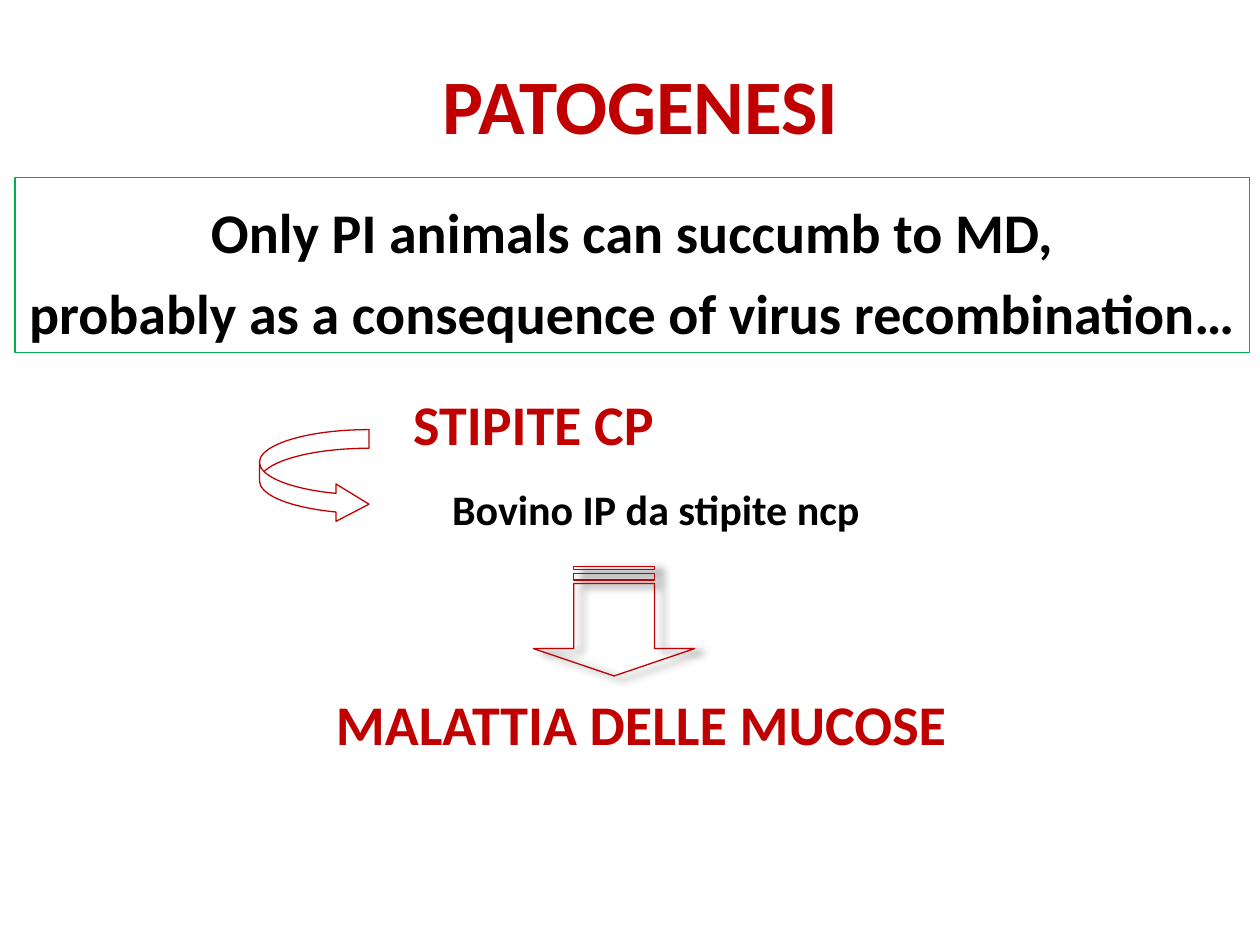
from lxml import etree
from pptx import Presentation
from pptx.dml.color import RGBColor
from pptx.enum import shapes, text
from pptx.oxml.ns import qn
from pptx.util import Pt

RED = RGBColor(0xC0, 0x00, 0x00)
GREEN = RGBColor(0x00, 0xB0, 0x50)
BLACK = RGBColor(0x00, 0x00, 0x00)
FONT = "Calibri"


def write_lines(shape, lines, size, color, wrap=True, spacing=None):
    frame = shape.text_frame
    frame.text = "\n".join(lines)
    frame.word_wrap = wrap
    frame.auto_size = text.MSO_AUTO_SIZE.SHAPE_TO_FIT_TEXT
    for paragraph in frame.paragraphs:
        paragraph.alignment = text.PP_ALIGN.CENTER
        paragraph.line_spacing = spacing
        font = paragraph.runs[0].font
        font.name, font.size, font.bold = FONT, Pt(size), True
        font.color.rgb = color


def add_label(slide, box, label, size, color, wrap=True):
    shape = slide.shapes.add_textbox(*map(Pt, box))
    write_lines(shape, [label], size, color, wrap)


def add_outline(slide, kind, box, color, adjustments=()):
    """Add an unfilled preset shape with a thin line."""
    shape = slide.shapes.add_shape(kind, *map(Pt, box))
    shape.shadow.inherit = False
    shape.fill.background()
    shape.line.color.rgb = color
    shape.line.width = Pt(0.75)
    for index, value in enumerate(adjustments):
        shape.adjustments[index] = value
    return shape


def add_shadow(shape, blur, distance, angle, opacity):
    effects = shape._element.spPr.find(qn("a:effectLst"))
    shadow = etree.SubElement(
        effects, qn("a:outerShdw"), blurRad=str(Pt(blur)), dist=str(Pt(distance)),
        dir=str(angle * 60000), algn="ctr", rotWithShape="0")
    color = etree.SubElement(shadow, qn("a:srgbClr"), val=str(BLACK))
    etree.SubElement(color, qn("a:alpha"), val=str(opacity * 1000))


def add_statement(slide, box):
    frame = add_outline(slide, shapes.MSO_SHAPE.RECTANGLE, box, GREEN)
    write_lines(frame, ["Only PI animals can succumb to MD,",
                        "probably as a consequence of virus recombination…"],
                32, BLACK, spacing=1.2)


def add_pathway(slide, left, top):
    """Add the strain, the infected animal and the resulting disease."""
    add_outline(slide, shapes.MSO_SHAPE.CURVED_RIGHT_ARROW,
                (left + 36.7, top + 26.6, 62.6, 53.3), RED, (0.2, 0.4, 0.354))
    add_label(slide, (left + 116.6, top, 153.4, 46), "STIPITE CP", 32, RED, wrap=False)
    add_label(slide, (left + 67.7, top + 54, 391, 36), "Bovino IP da stipite ncp", 24, BLACK)
    arrow = add_outline(slide, shapes.MSO_SHAPE.STRIPED_RIGHT_ARROW,
                        (left + 208, top + 90, 62.6, 92.2), RED, (0.5, 0.25))
    arrow.rotation = 90
    add_shadow(arrow, blur=5, distance=5.4, angle=23, opacity=75)
    add_label(slide, (left, top + 171.4, 509.8, 46), "MALATTIA DELLE MUCOSE", 32, RED)


def main():
    presentation = Presentation()
    presentation.slide_width, presentation.slide_height = Pt(720), Pt(540)
    slide = presentation.slides.add_slide(presentation.slide_layouts[6])
    add_statement(slide, (8.6, 101.5, 705.6, 100))
    add_label(slide, (244.8, 29.5, 242.6, 60.5), "PATOGENESI", 44, RED, wrap=False)
    add_pathway(slide, 111.6, 218.9)
    presentation.save("out.pptx")


if __name__ == "__main__":
    main()
